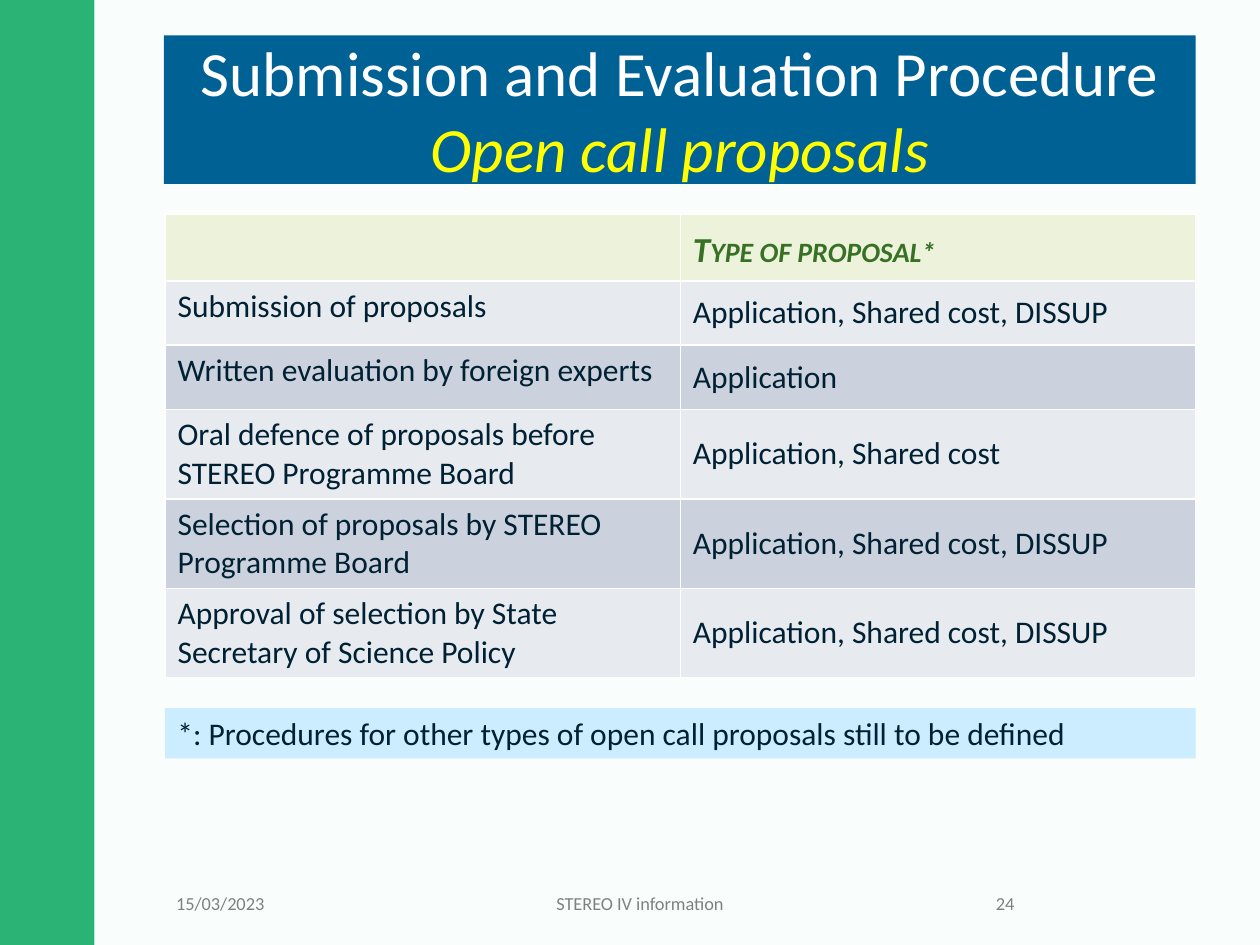
import pptx
import pptx.util
import pptx.dml.color
import pptx.enum.shapes
import pptx.enum.text
import pptx.oxml.ns
from lxml import etree

INCH = pptx.util.Inches
ALIGN = pptx.enum.text.PP_ALIGN
MIDDLE = pptx.enum.text.MSO_ANCHOR.MIDDLE
TOP = pptx.enum.text.MSO_ANCHOR.TOP
WIDE, HIGH = 10, 7.5
BAR = 0.75              # width of the green side bar
LEFT, SPAN = 1.31, 8.18  # content column
INK = "002133"

HEAD = "Type of proposal*"
ALL = "Application, Shared cost, DISSUP"
# step, proposal types, row height, anchor of the step
STEPS = [
    ("Submission of proposals", ALL, 0.51, TOP),
    ("Written evaluation by foreign experts", "Application", 0.51, TOP),
    ("Oral defence of proposals before STEREO Programme Board",
     "Application, Shared cost", 0.71, MIDDLE),
    ("Selection of proposals by STEREO Programme Board", ALL, 0.71, TOP),
    ("Approval of selection by State Secretary of Science Policy", ALL, 0.71, TOP),
]
# text, left, width, alignment
FOOT = [
    ("15/03/2023", 1.3, 1.18, ALIGN.LEFT),
    ("STEREO IV information", 2.56, 5.04, ALIGN.CENTER),
    ("24", 7.68, 0.47, ALIGN.RIGHT),
]


def paint(fill, color):
    fill.solid()
    fill.fore_color.rgb = pptx.dml.color.RGBColor.from_string(color)


def style(font, size, color, bold=False, italic=False):
    font.name, font.size = "Calibri", pptx.util.Pt(size)
    font.bold, font.italic = bold, italic
    font.color.rgb = pptx.dml.color.RGBColor.from_string(color)


def write(frame, text, size, color, align=ALIGN.LEFT):
    frame.word_wrap = True
    frame.vertical_anchor = MIDDLE
    para = frame.paragraphs[0]
    para.text, para.alignment = text, align
    style(para.font, size, color)


def box(slide, x, y, w, h, color, alpha=None):
    shape = slide.shapes.add_shape(pptx.enum.shapes.MSO_SHAPE.RECTANGLE,
                                   INCH(x), INCH(y), INCH(w), INCH(h))
    shape.shadow.inherit = False
    shape.line.fill.background()
    paint(shape.fill, color)
    if alpha:
        tone = shape.fill._xPr.find(".//" + pptx.oxml.ns.qn("a:srgbClr"))
        etree.SubElement(tone, pptx.oxml.ns.qn("a:alpha"), val=str(alpha * 1000))
    return shape


def backdrop(slide):
    paint(slide.background.fill, "CAFBED")
    box(slide, 0, 0, BAR, HIGH, "03A158", 80)
    box(slide, BAR, 0, WIDE - BAR, HIGH, "FFFFFF", 90)


def heading(slide):
    title = slide.shapes.title
    title.left, title.top = INCH(1.3), INCH(0.28)
    title.width, title.height = INCH(8.19), INCH(1.18)
    paint(title.fill, "006195")
    frame = title.text_frame
    frame.auto_size = pptx.enum.text.MSO_AUTO_SIZE.NONE
    frame.word_wrap, frame.vertical_anchor = True, MIDDLE
    para = frame.paragraphs[0]
    para.alignment = ALIGN.CENTER
    for text, color, italic in (
            ("Submission and Evaluation Procedure ", "FFFFFF", False),
            ("Open call proposals", "FFFF00", True)):
        run = para.add_run()
        run.text = text
        style(run.font, 36, color, italic=italic)
    # Keep the title above the backdrop
    tree = slide.shapes._spTree
    tree.remove(title._element)
    tree.append(title._element)


def put(cell, text, fill, anchor=MIDDLE):
    paint(cell.fill, fill)
    if text:
        write(cell.text_frame, text, 18, INK)
    cell.vertical_anchor = anchor


def grid(slide):
    tall = [0.53] + [step[2] for step in STEPS]
    table = slide.shapes.add_table(len(tall), 2, INCH(LEFT), INCH(1.7),
                                   INCH(SPAN), INCH(sum(tall))).table
    table.first_row = table.horz_banding = False
    for row, high in zip(table.rows, tall):
        row.height = INCH(high)

    # Header row, in small capitals
    put(table.cell(0, 0), "", "EDF3DB")
    put(table.cell(0, 1), HEAD, "EDF3DB")
    para = table.cell(0, 1).text_frame.paragraphs[0]
    para.line_spacing = 1.15
    style(para.font, 20, "387026", bold=True, italic=True)
    run = para.runs[0]
    run.font._element.set("cap", "small")

    # Procedure steps, in alternating tints
    for i, (step, kinds, _, anchor) in enumerate(STEPS):
        tint = ("E7EAEF", "CCD2DD")[i % 2]
        put(table.cell(i + 1, 0), step, tint, anchor)
        put(table.cell(i + 1, 1), kinds, tint)


def footer(slide):
    for text, x, w, align in FOOT:
        area = slide.shapes.add_textbox(INCH(x), INCH(6.97), INCH(w), INCH(0.4))
        write(area.text_frame, text, 10.5, "808080", align)


def main():
    deck = pptx.Presentation()
    deck.slide_width, deck.slide_height = INCH(WIDE), INCH(HIGH)
    slide = deck.slides.add_slide(deck.slide_layouts[5])
    backdrop(slide)
    heading(slide)
    footer(slide)
    grid(slide)
    # Footnote
    note = box(slide, LEFT, 5.62, SPAN, 0.4, "CCECFF")
    write(note.text_frame, "*: Procedures for other types of open call "
          "proposals still to be defined", 18, INK)
    deck.save("out.pptx")


if __name__ == "__main__":
    main()
